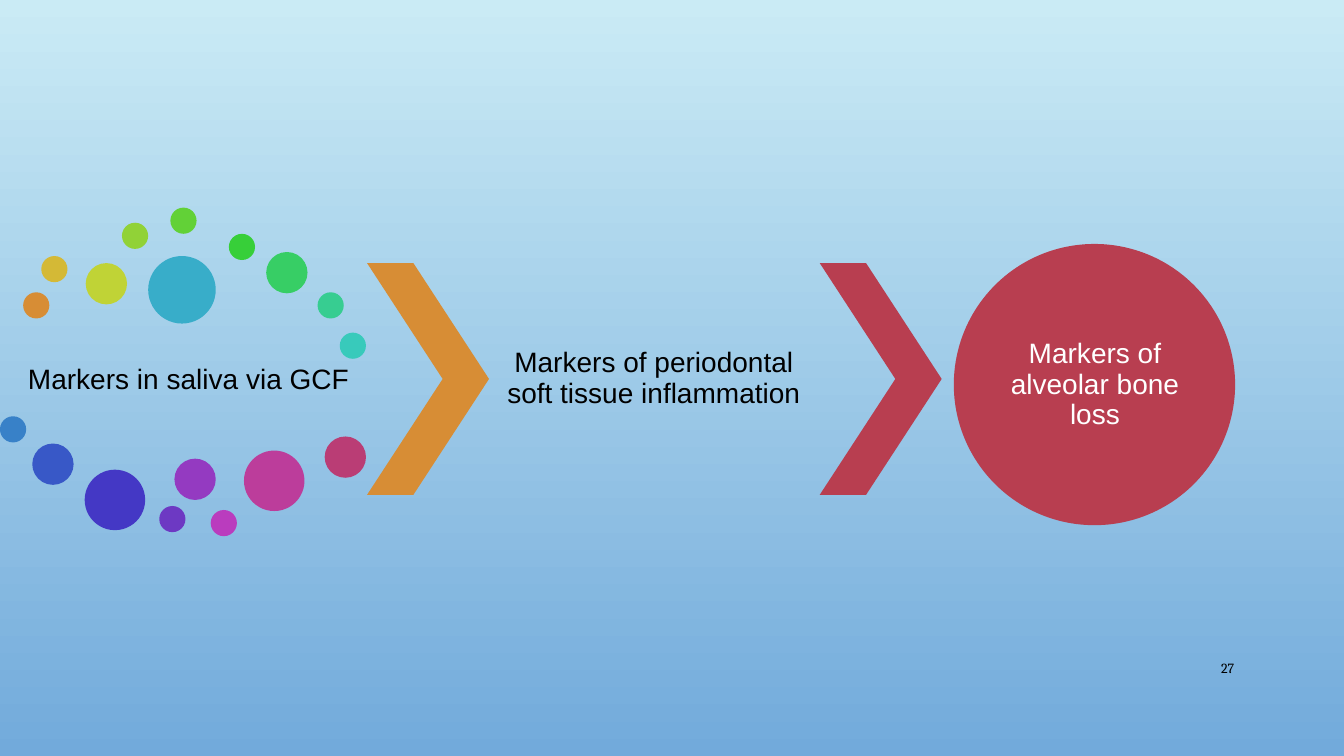
from typing import NamedTuple

from pptx import Presentation
from pptx import util as u
from pptx.dml.color import RGBColor
from pptx.enum import shapes, text

EMU_PER_PX = 9144
SMALL, MEDIUM, LARGE, HUGE = 26, 41, 60, 67
ORANGE, RED = "D78D35", "B83E50"
BLACK, WHITE = "000000", "FFFFFF"


class Dot(NamedTuple):
    left: int
    top: int
    size: int
    color: str


class Chevron(NamedTuple):
    left: int
    color: str


class Label(NamedTuple):
    wording: str
    left: int
    top: int
    width: int
    height: int
    margin: int = 3
    color: str = BLACK
    font: str = "Arial"
    points: int = 20
    align: text.PP_ALIGN = text.PP_ALIGN.CENTER
    spacing: float = 0.9


DOTS = [
    Dot(23, 290, SMALL, ORANGE),
    Dot(41, 254, SMALL, "D4B936"),
    Dot(85, 261, MEDIUM, "C0D336"),
    Dot(121, 221, SMALL, "91D237"),
    Dot(169, 206, SMALL, "62D137"),
    Dot(227, 232, SMALL, "37CF39"),
    Dot(264, 250, MEDIUM, "37CE65"),
    Dot(315, 290, SMALL, "37CD91"),
    Dot(337, 330, SMALL, "38CABB"),
    Dot(147, 254, HUGE, "38ADC9"),
    Dot(0, 413, SMALL, "3881C8"),
    Dot(32, 440, MEDIUM, "3858C7"),
    Dot(84, 466, LARGE, "4438C5"),
    Dot(158, 502, SMALL, "6D39C3"),
    Dot(173, 455, MEDIUM, "943AC1"),
    Dot(209, 506, SMALL, "BA3CBE"),
    Dot(242, 447, LARGE, "BC3D9B"),
    Dot(322, 433, MEDIUM, "BA3D75"),
    Dot(946, 242, 279, RED),
]
CHEVRONS = [Chevron(364, ORANGE), Chevron(813, RED)]
LABELS = [
    Label("Markers in saliva via GCF", 23, 323, 328, 108),
    Label("Markers of periodontal soft tissue inflammation", 484, 261, 329, 230),
    Label("Markers of alveolar bone loss", 987, 283, 198, 198, margin=0, color=WHITE),
    Label("27", 1150, 643, 84, 40, margin=10, font="Cambria", points=10,
          align=text.PP_ALIGN.RIGHT, spacing=1.0),
]


def px(length: int) -> u.Emu:
    return u.Emu(length * EMU_PER_PX)


def rgb(color: str) -> RGBColor:
    return RGBColor.from_string(color)


def paint_background(slide, top_color: str, bottom_color: str) -> None:
    fill = slide.background.fill
    fill.gradient()
    fill.gradient_angle = 270
    for stop, color in zip(fill.gradient_stops, (top_color, bottom_color)):
        stop.color.rgb = rgb(color)


def add_filled(slide, kind, left: int, top: int, width: int, height: int, color: str):
    shape = slide.shapes.add_shape(kind, px(left), px(top), px(width), px(height))
    shape.shadow.inherit = False
    shape.fill.solid()
    shape.fill.fore_color.rgb = rgb(color)
    shape.line.fill.background()
    return shape


def add_dot(slide, dot: Dot) -> None:
    add_filled(slide, shapes.MSO_SHAPE.OVAL, dot.left, dot.top, dot.size, dot.size, dot.color)


def add_chevron(slide, chevron: Chevron) -> None:
    shape = add_filled(slide, shapes.MSO_SHAPE.CHEVRON, chevron.left, 261, 121, 230, chevron.color)
    shape.adjustments[0] = 0.62


def add_label(slide, label: Label) -> None:
    box = slide.shapes.add_textbox(px(label.left), px(label.top), px(label.width), px(label.height))
    frame = box.text_frame
    frame.word_wrap = True
    frame.vertical_anchor = text.MSO_ANCHOR.MIDDLE
    frame.margin_left = frame.margin_right = px(label.margin)
    frame.margin_top = frame.margin_bottom = px(min(label.margin, 5))
    paragraph = frame.paragraphs[0]
    paragraph.text = label.wording
    paragraph.alignment = label.align
    paragraph.line_spacing = label.spacing
    paragraph.font.name = label.font
    paragraph.font.size = u.Pt(label.points)
    paragraph.font.color.rgb = rgb(label.color)


def main() -> None:
    presentation = Presentation()
    presentation.slide_width = px(1333)
    presentation.slide_height = px(750)
    slide = presentation.slides.add_slide(presentation.slide_layouts.get_by_name("Blank"))
    paint_background(slide, "CAEBF5", "72AADB")
    for dot in DOTS:
        add_dot(slide, dot)
    for chevron in CHEVRONS:
        add_chevron(slide, chevron)
    for label in LABELS:
        add_label(slide, label)
    presentation.save("out.pptx")


if __name__ == "__main__":
    main()
